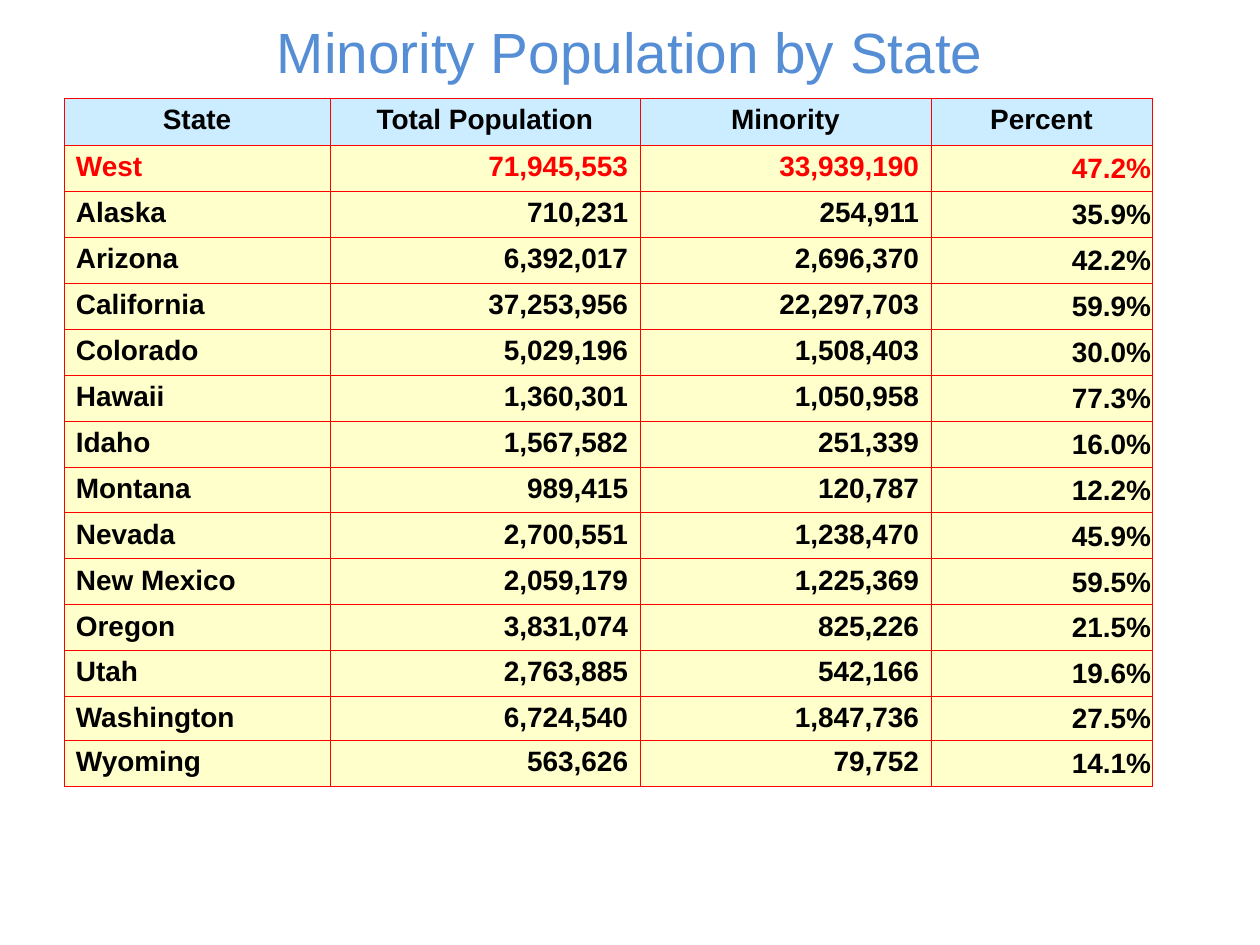
"""Build a slide with a table of minority population by state."""
from pptx import Presentation
from pptx.dml.color import RGBColor as Rgb
from pptx.enum.text import MSO_ANCHOR as Anchor, PP_ALIGN as Align
from pptx.oxml import parse_xml
from pptx.oxml.ns import nsdecls
from pptx.util import Pt

THEME = {
    "font": "Arial", "title": "558ED5", "text": "000000", "accent": "FF0000",
    "head": "CCECFF", "body": "FFFFCC", "line": "FF0000",
    "title_pt": 32.4, "cell_pt": 16, "line_pt": 0.5,
}
ROWS = [
    ("State", "Total Population", "Minority", "Percent"),
    ("West", "71,945,553", "33,939,190", "47.2%"),
    ("Alaska", "710,231", "254,911", "35.9%"),
    ("Arizona", "6,392,017", "2,696,370", "42.2%"),
    ("California", "37,253,956", "22,297,703", "59.9%"),
    ("Colorado", "5,029,196", "1,508,403", "30.0%"),
    ("Hawaii", "1,360,301", "1,050,958", "77.3%"),
    ("Idaho", "1,567,582", "251,339", "16.0%"),
    ("Montana", "989,415", "120,787", "12.2%"),
    ("Nevada", "2,700,551", "1,238,470", "45.9%"),
    ("New Mexico", "2,059,179", "1,225,369", "59.5%"),
    ("Oregon", "3,831,074", "825,226", "21.5%"),
    ("Utah", "2,763,885", "542,166", "19.6%"),
    ("Washington", "6,724,540", "1,847,736", "27.5%"),
    ("Wyoming", "563,626", "79,752", "14.1%"),
]
WIDTHS = [266, 310, 291, 221]
HEIGHTS = [47] + [46] * 12 + [43, 46]
SIDES = ("left", "top", "right", "bottom")


def px(n):
    return round(n * 914400 / 126)


def write(frame, text, align, size, color, bold):
    para = frame.paragraphs[0]
    para.alignment = align
    run = para.add_run()
    run.text = text
    form = {"name": THEME["font"], "size": Pt(size), "bold": bold}
    for key, value in form.items():
        setattr(run.font, key, value)
    run.font.color.rgb = Rgb.from_string(THEME[color])


deck = Presentation()
deck.slide_width, deck.slide_height = px(1260), px(945)
slide = deck.slides.add_slide(deck.slide_layouts[6])

title = slide.shapes.add_textbox(0, px(29), px(1260), px(43)).text_frame
title.word_wrap = True
title.vertical_anchor = Anchor.MIDDLE
write(title, "Minority Population by State", Align.CENTER, THEME["title_pt"], "title", False)

table = slide.shapes.add_table(
    len(ROWS), len(WIDTHS), px(64), px(98), px(sum(WIDTHS)), px(sum(HEIGHTS))
).table
table.first_row = table.horz_banding = False
for col, width in zip(table.columns, WIDTHS):
    col.width = px(width)
for row, height in zip(table.rows, HEIGHTS):
    row.height = px(height)

for r, states in enumerate(ROWS):
    for c, text in enumerate(states):
        cell = table.cell(r, c)
        rate = r > 0 and c == 3
        align = Align.CENTER if r == 0 else Align.LEFT if c == 0 else Align.RIGHT
        color = "accent" if r == 1 else "text"
        write(cell.text_frame, text, align, THEME["cell_pt"], color, True)
        cell.vertical_anchor = Anchor.MIDDLE if rate else Anchor.TOP
        for side, gap in zip(SIDES, (1, 1, 1, 0) if rate else (12, 6, 12, 4)):
            setattr(cell, f"margin_{side}", px(gap))
        props = cell._tc.get_or_add_tcPr()
        for edge in ("lnL", "lnR", "lnT", "lnB"):
            props.append(parse_xml(
                f'<a:{edge} {nsdecls("a")} w="{Pt(THEME["line_pt"])}"><a:solidFill>'
                f'<a:srgbClr val="{THEME["line"]}"/></a:solidFill></a:{edge}>'
            ))
        cell.fill.solid()
        cell.fill.fore_color.rgb = Rgb.from_string(THEME["body" if r else "head"])

deck.save("out.pptx")
